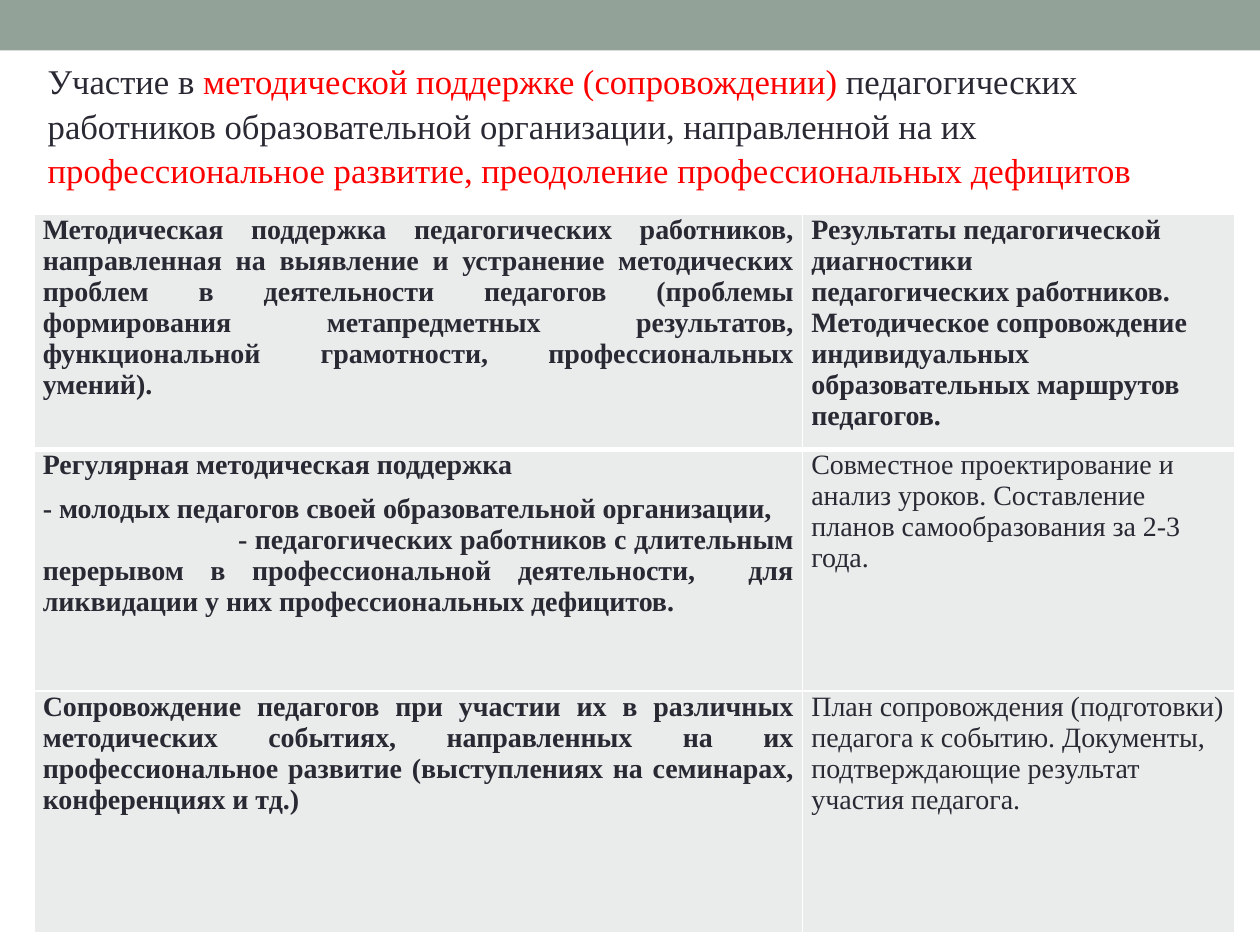
from lxml import etree
from pptx import Presentation
from pptx.dml.color import RGBColor
from pptx.enum.shapes import MSO_SHAPE
from pptx.enum.text import MSO_ANCHOR, PP_ALIGN
from pptx.oxml.ns import qn
from pptx.util import Inches, Pt

RECT = MSO_SHAPE.RECTANGLE
MIDDLE = MSO_ANCHOR.MIDDLE
LEFT, JUSTIFY = PP_ALIGN.LEFT, PP_ALIGN.JUSTIFY

SAGE = RGBColor(0x93, 0xA2, 0x99)
DARK = RGBColor(0x29, 0x29, 0x34)
RED = RGBColor(0xFF, 0x00, 0x00)
PALE = RGBColor(0xE9, 0xEC, 0xEB)
WHITE = RGBColor(0xFF, 0xFF, 0xFF)
FONT = "Times New Roman"


class Page:
    title_size = Pt(19.8)
    cell_size = Pt(16)

    def __init__(self, slide):
        self.slide = slide

    def run(self, para, text, size, color=DARK, bold=False):
        run = para.add_run()
        run.text = text
        font = run.font
        font.name, font.size, font.bold = FONT, size, bold
        font.color.rgb = color

    def band(self, x, y, w, h, color):
        box = self.slide.shapes.add_shape(RECT, Inches(x), Inches(y), Inches(w), Inches(h))
        box.shadow.inherit = False
        box.fill.solid()
        box.fill.fore_color.rgb = color
        box.line.fill.background()

    def title(self, x, y, w, h, parts):
        box = self.slide.shapes.add_textbox(Inches(x), Inches(y), Inches(w), Inches(h))
        frame = box.text_frame
        frame.word_wrap = True
        frame.vertical_anchor = MIDDLE
        para = frame.paragraphs[0]
        para.line_spacing = 1.08
        for text, color in parts:
            self.run(para, text, self.title_size, color)

    def border(self, cell, side, width):
        line = etree.SubElement(cell._tc.get_or_add_tcPr(), qn("a:" + side), w=str(Pt(width)))
        fill = etree.SubElement(line, qn("a:solidFill"))
        etree.SubElement(fill, qn("a:srgbClr"), val=str(WHITE))

    def cell(self, cell, paras, align, bold, widths):
        cell.margin_left = cell.margin_right = Inches(0.07)
        cell.margin_top = cell.margin_bottom = 0
        for side, width in widths.items():
            self.border(cell, side, width)
        cell.fill.solid()
        cell.fill.fore_color.rgb = PALE
        frame = cell.text_frame
        for i, (text, after, indent) in enumerate(paras):
            para = frame.add_paragraph() if i else frame.paragraphs[0]
            para.alignment = align
            para.space_after = Pt(after)
            if indent:
                para._p.get_or_add_pPr().set("indent", str(Inches(indent)))
            self.run(para, text, self.cell_size, bold=bold)

    def table(self, x, y, cols, rows, data):
        shape = self.slide.shapes.add_table(
            len(rows), len(cols), Inches(x), Inches(y), Inches(sum(cols)), Inches(sum(rows)))
        table = shape.table
        table.first_row = table.horz_banding = False
        for col, width in zip(table.columns, cols):
            col.width = Inches(width)
        for r, (row, height) in enumerate(zip(table.rows, rows)):
            row.height = Inches(height)
            # A thick rule parts the heading row from the rest
            widths = {"lnL": 1, "lnR": 1, "lnT": 3 if r == 1 else 1, "lnB": 3 if r == 0 else 1}
            for c, cell in enumerate(row.cells):
                self.cell(cell, data[r][c], LEFT if c else JUSTIFY, r == 0 or c == 0, widths)


# Title runs: text, colour
TITLE = [
    ("Участие в ", DARK),
    ("методической поддержке (сопровождении) ", RED),
    ("педагогических работников образовательной организации, направленной на их ", DARK),
    ("профессиональное развитие, преодоление профессиональных дефицитов", RED),
]

# Table cells: paragraphs of text, space after, first-line indent
ROWS = [
    [
        [("Методическая поддержка педагогических работников, направленная на выявление "
          "и устранение методических проблем в деятельности педагогов (проблемы "
          "формирования метапредметных результатов, функциональной грамотности, "
          "профессиональных умений).", 0, 0)],
        [("Результаты педагогической диагностики", 0, 0),
         ("педагогических работников. Методическое сопровождение индивидуальных "
          "образовательных маршрутов педагогов.", 0, 0)],
    ],
    [
        [("Регулярная методическая поддержка", 7.5, 0),
         ("- молодых педагогов своей образовательной организации,", 0, 0),
         ("- педагогических работников с длительным перерывом в профессиональной "
          "деятельности,  для ликвидации у них профессиональных дефицитов.", 7.5, 1.55)],
        [("Совместное проектирование и анализ уроков. Составление планов "
          "самообразования за 2-3 года.", 0, 0)],
    ],
    [
        [("Сопровождение педагогов при участии их в различных методических событиях, "
          "направленных на их профессиональное развитие (выступлениях на семинарах, "
          "конференциях и тд.)", 7.5, 0)],
        [("План сопровождения (подготовки) педагога к событию. Документы, "
          "подтверждающие результат участия педагога.", 0, 0)],
    ],
]


def main():
    deck = Presentation()
    deck.slide_width, deck.slide_height = Inches(10), Inches(7.5)
    page = Page(deck.slides.add_slide(deck.slide_layouts[6]))

    # Top band and title
    page.band(0, 0, 10, 0.4, SAGE)
    page.title(0.28, 0.44, 9.22, 1.08, TITLE)

    # Table of support work and its results
    page.table(0.27, 1.7, [6.1, 3.43], [1.73, 1.92, 1.92], ROWS)

    deck.save("out.pptx")


if __name__ == "__main__":
    main()
